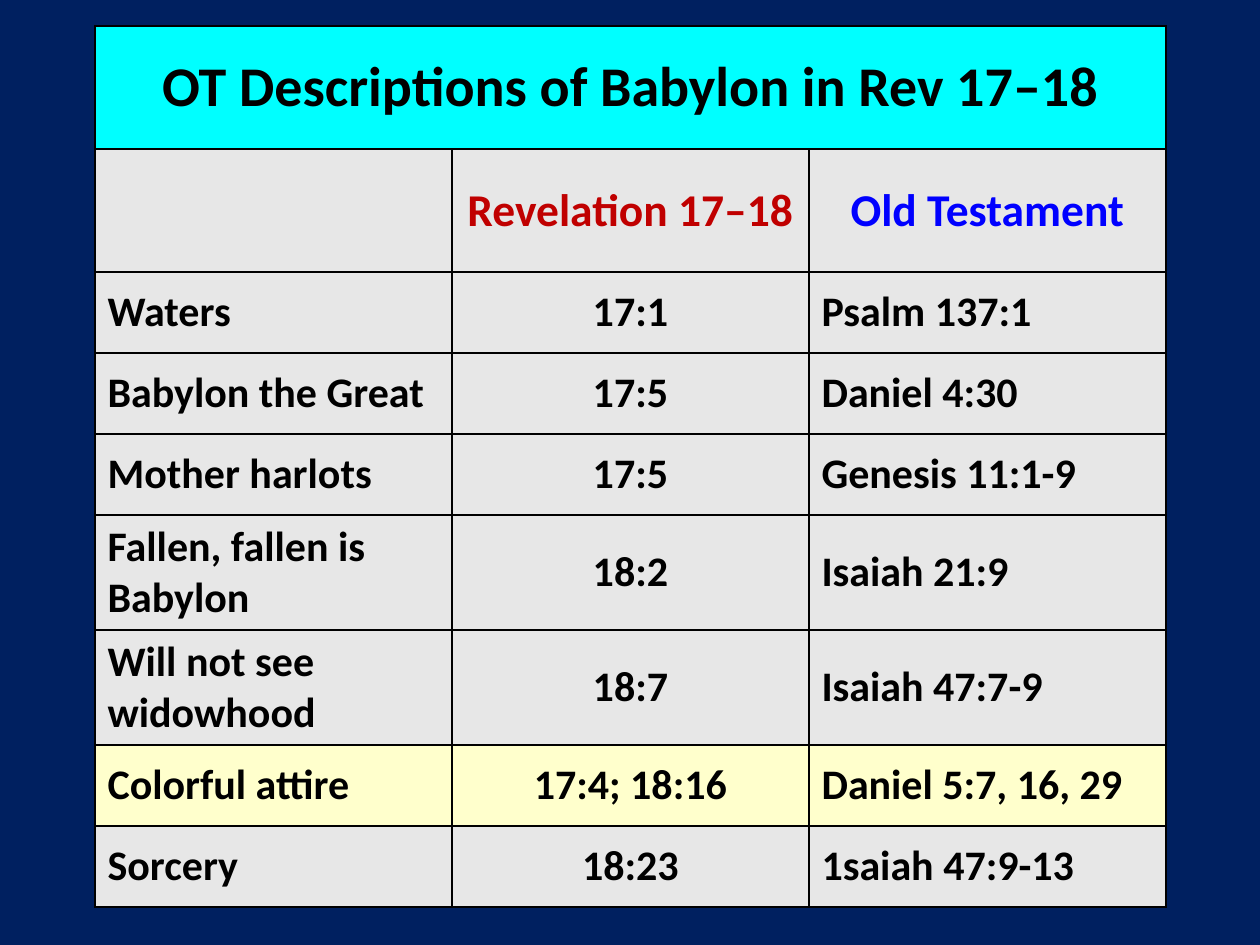
"""Build a slide with a table of Old Testament descriptions of Babylon."""
from lxml.etree import SubElement
from pptx import Presentation
from pptx.dml.color import RGBColor
from pptx.enum.text import MSO_ANCHOR, PP_ALIGN
from pptx.oxml.ns import qn
from pptx.util import Emu, Pt

PX = 914400 / 126
COLORS = {
    "background": "002060", "title": "00FFFF", "plain": "E7E7E7",
    "highlight": "FFFFCC", "text": "000000", "revelation": "C00000",
    "testament": "0000FF", "border": "000000",
}
ROWS = [
    ("OT Descriptions of Babylon in Rev 17–18", "", ""),
    ("", "Revelation 17–18", "Old Testament"),
    ("Waters", "17:1", "Psalm 137:1"),
    ("Babylon the Great", "17:5", "Daniel 4:30"),
    ("Mother harlots", "17:5", "Genesis 11:1-9"),
    ("Fallen, fallen is Babylon", "18:2", "Isaiah 21:9"),
    ("Will not see widowhood", "18:7", "Isaiah 47:7-9"),
    ("Colorful attire", "17:4; 18:16", "Daniel 5:7, 16, 29"),
    ("Sorcery", "18:23", "1saiah 47:9-13"),
]
HEADER_COLORS = ["text", "revelation", "testament"]
FILLS = {0: "title", 7: "highlight"}
SIZES = {0: 32, 1: 26}
HEIGHTS = [123, 123] + [81] * 7


def px(n):
    return Emu(round(n * PX))


def add_borders(cell):
    tcPr = cell._tc.get_or_add_tcPr()
    for i, side in enumerate(("lnL", "lnR", "lnT", "lnB")):
        ln = tcPr.makeelement(qn(f"a:{side}"), {"w": str(Pt(1))})
        fill = SubElement(ln, qn("a:solidFill"))
        SubElement(fill, qn("a:srgbClr"), val=COLORS["border"])
        tcPr.insert(i, ln)


prs = Presentation()
prs.slide_width, prs.slide_height = px(1260), px(945)
s = prs.slides.add_slide(prs.slide_layouts[6])
s.background.fill.solid()
s.background.fill.fore_color.rgb = RGBColor.from_string(COLORS["background"])

frame = s.shapes.add_table(len(ROWS), 3, px(95), px(26), px(1071), px(sum(HEIGHTS)))
table = frame.table
for col in table.columns:
    col.width = px(357)
for row, height in zip(table.rows, HEIGHTS):
    row.height = px(height)
table.cell(0, 0).merge(table.cell(0, 2))

for r, values in enumerate(ROWS):
    for c, value in enumerate(values):
        cell = table.cell(r, c)
        cell.fill.solid()
        cell.fill.fore_color.rgb = RGBColor.from_string(COLORS[FILLS.get(r, "plain")])
        cell.vertical_anchor = MSO_ANCHOR.MIDDLE
        add_borders(cell)
        if not value:
            continue
        p = cell.text_frame.paragraphs[0]
        p.text = value
        p.alignment = PP_ALIGN.CENTER if r < 2 or c == 1 else PP_ALIGN.LEFT
        p.font.name = "Calibri"
        p.font.size = Pt(SIZES.get(r, 24))
        p.font.bold = True
        color = HEADER_COLORS[c] if r == 1 else "text"
        p.font.color.rgb = RGBColor.from_string(COLORS[color])

prs.save("out.pptx")
